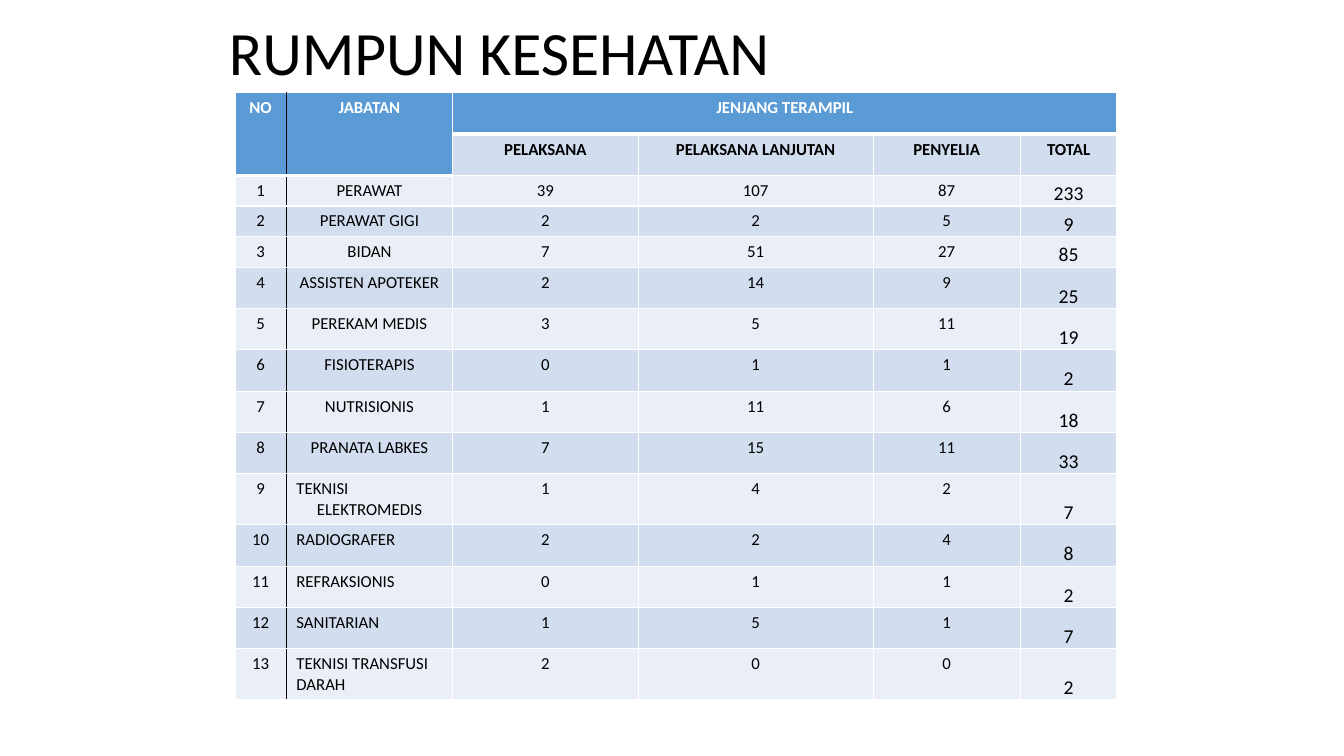
"""Build the slide with the table of skilled health positions."""
from lxml import etree
from pptx import Presentation
from pptx.dml.color import RGBColor
from pptx.enum.text import MSO_ANCHOR, PP_ALIGN
from pptx.oxml.ns import qn
from pptx.util import Inches, Pt

LEFT, CENTER = PP_ALIGN.LEFT, PP_ALIGN.CENTER
TOP, MIDDLE, BOTTOM = MSO_ANCHOR.TOP, MSO_ANCHOR.MIDDLE, MSO_ANCHOR.BOTTOM
WHITE = RGBColor(0xFF, 0xFF, 0xFF)
BLACK = RGBColor(0x00, 0x00, 0x00)
BLUE = RGBColor(0x5B, 0x9B, 0xD5)
DARK_BAND = RGBColor(0xD2, 0xDE, 0xEF)
LIGHT_BAND = RGBColor(0xEA, 0xEF, 0xF7)

COLUMN_WIDTHS = [0.51, 1.65, 1.84, 2.33, 1.46, 0.96]
ROW_HEIGHTS = [0.41, 0.41, 0.27, 0.28, 0.29] + [0.41] * 10
HEADINGS = [
    ["NO", "JABATAN", "JENJANG TERAMPIL", "", "", ""],
    ["", "", "PELAKSANA", "PELAKSANA LANJUTAN", "PENYELIA", "TOTAL"],
]
MERGES = [(0, 0, 1, 0), (0, 1, 1, 1), (0, 2, 0, 5)]
POSITIONS = [
    ("PERAWAT", 39, 107, 87, 233),
    ("PERAWAT GIGI", 2, 2, 5, 9),
    ("BIDAN", 7, 51, 27, 85),
    ("ASSISTEN APOTEKER", 2, 14, 9, 25),
    ("PEREKAM MEDIS", 3, 5, 11, 19),
    ("FISIOTERAPIS", 0, 1, 1, 2),
    ("NUTRISIONIS", 1, 11, 6, 18),
    ("PRANATA LABKES", 7, 15, 11, 33),
    ("TEKNISI\nELEKTROMEDIS", 1, 4, 2, 7),
    ("RADIOGRAFER", 2, 2, 4, 8),
    ("REFRAKSIONIS", 0, 1, 1, 2),
    ("SANITARIAN", 1, 5, 1, 7),
    ("TEKNISI TRANSFUSI DARAH", 2, 0, 0, 2),
]
LEFT_ALIGNED = {"TEKNISI", "RADIOGRAFER", "REFRAKSIONIS", "SANITARIAN",
                "TEKNISI TRANSFUSI DARAH"}
TOTAL_COLUMN = 5
TOTAL_FORMAT = {
    "vertical_anchor": BOTTOM, "margin_left": Inches(0.01),
    "margin_right": Inches(0.01), "margin_top": Inches(0.01), "margin_bottom": 0,
}


def apply_format(target, values):
    """Set each named attribute on the target."""
    for name, value in values.items():
        setattr(target, name, value)


class SlideBuilder:
    """Hold the style and the current slide."""

    font_name = "Calibri"

    def __init__(self, deck):
        """Add a title-only slide to the deck."""
        self.slide = deck.slides.add_slide(deck.slide_layouts[5])

    def style_font(self, font, size, color, bold=False):
        """Give a font the slide's typeface with a size, colour and weight."""
        apply_format(font, {"name": self.font_name, "size": Pt(size), "bold": bold})
        font.color.rgb = color

    def title(self, text, left, top, width, height):
        """Place and format the title placeholder."""
        box = self.slide.shapes.title
        apply_format(box, {"left": Inches(left), "top": Inches(top),
                           "width": Inches(width), "height": Inches(height)})
        apply_format(box.text_frame, {"text": text, "word_wrap": True,
                                      "vertical_anchor": MIDDLE})
        para = box.text_frame.paragraphs[0]
        apply_format(para, {"alignment": LEFT, "line_spacing": 0.9})
        self.style_font(para.runs[0].font, 44, BLACK)

    def borders(self, cell, column, bottom_width):
        """Draw cell borders with a black rule between the first two columns."""
        sides = {
            "a:lnL": (BLACK if column == 1 else WHITE, 1),
            "a:lnR": (BLACK if column == 0 else WHITE, 1),
            "a:lnT": (WHITE, 1),
            "a:lnB": (WHITE, bottom_width),
        }
        properties = cell._tc.get_or_add_tcPr()
        for tag, (color, width) in sides.items():
            line = etree.SubElement(properties, qn(tag), w=str(Pt(width)))
            fill = etree.SubElement(line, qn("a:solidFill"))
            etree.SubElement(fill, qn("a:srgbClr"), val=str(color))

    def cell(self, cell, text, row, column):
        """Fill and format one table cell by its place."""
        heading = row < len(HEADINGS)
        top_heading = row == 0 or (heading and column < 2)
        is_total = column == TOTAL_COLUMN and not heading
        if top_heading or column < 2:
            self.borders(cell, column, 3 if top_heading else 1)
        cell.fill.solid()
        band = DARK_BAND if row % 2 else LIGHT_BAND
        cell.fill.fore_color.rgb = BLUE if top_heading else band
        apply_format(cell, TOTAL_FORMAT if is_total else {"vertical_anchor": TOP})
        if cell.is_spanned:
            return
        cell.text = text
        for para in cell.text_frame.paragraphs:
            para.alignment = LEFT if para.text in LEFT_ALIGNED else CENTER
            for span in para.runs:
                self.style_font(span.font, 14 if is_total else 12,
                                WHITE if top_heading else BLACK, heading)

    def table(self, rows, left, top):
        """Add the table with its merged headings."""
        frame = self.slide.shapes.add_table(
            len(rows), len(COLUMN_WIDTHS), Inches(left), Inches(top),
            Inches(sum(COLUMN_WIDTHS)), Inches(sum(ROW_HEIGHTS)))
        table = frame.table
        for column, width in zip(table.columns, COLUMN_WIDTHS):
            column.width = Inches(width)
        for row, height in zip(table.rows, ROW_HEIGHTS):
            row.height = Inches(height)
        for first_row, first_column, last_row, last_column in MERGES:
            table.cell(first_row, first_column).merge(
                table.cell(last_row, last_column))
        for row, values in enumerate(rows):
            for column, value in enumerate(values):
                self.cell(table.cell(row, column), str(value), row, column)


def main():
    """Build and save the deck."""
    deck = Presentation()
    apply_format(deck, {"slide_width": Inches(13.33), "slide_height": Inches(7.5)})
    page = SlideBuilder(deck)
    page.title("RUMPUN KESEHATAN", 2.17, 0.08, 9, 0.95)
    numbered = [(number, *entry) for number, entry in enumerate(POSITIONS, 1)]
    page.table(HEADINGS + numbered, 2.33, 0.92)
    deck.save("out.pptx")


if __name__ == "__main__":
    main()
